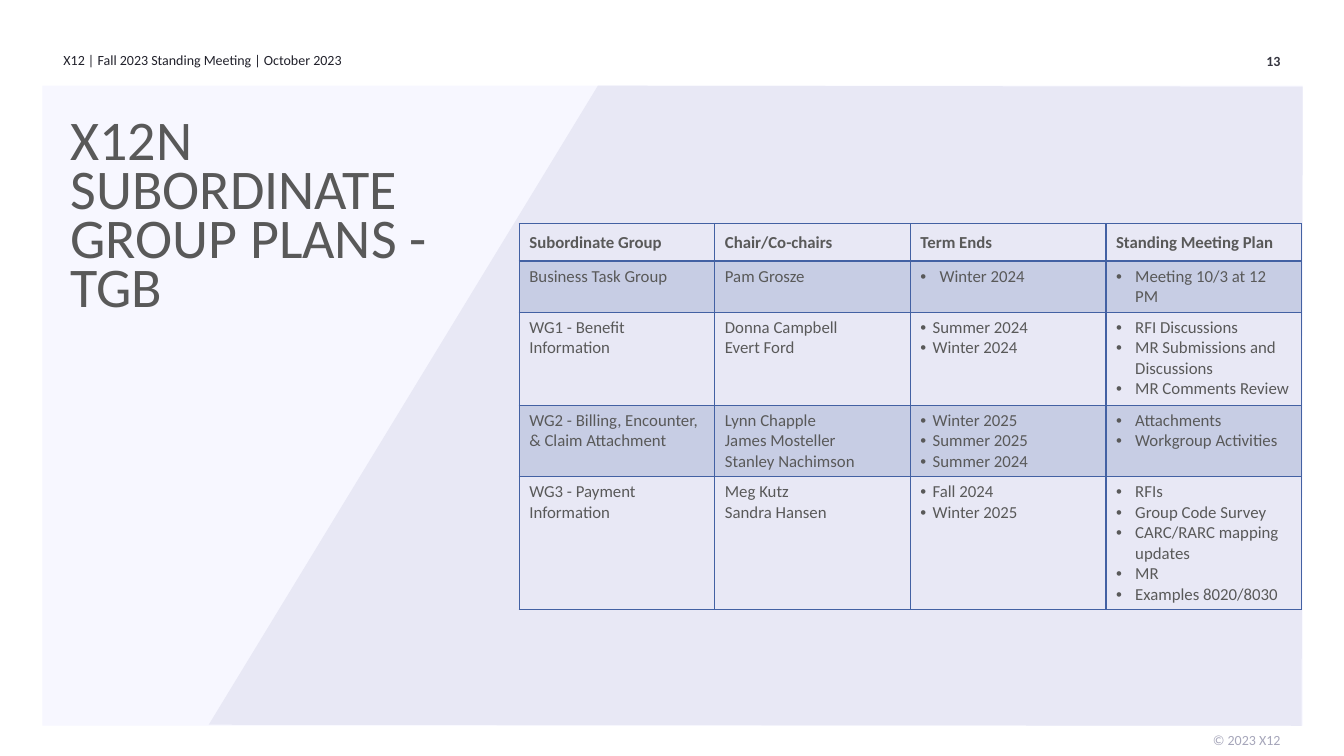
from lxml.etree import SubElement
from pptx import Presentation
from pptx.dml.color import RGBColor
from pptx.enum.shapes import MSO_SHAPE
from pptx.enum.text import MSO_ANCHOR, MSO_AUTO_SIZE, PP_ALIGN
from pptx.oxml.ns import qn
from pptx.util import Inches, Pt

TITLE = "X12N SUBORDINATE GROUP PLANS - TGB"
MEETING = "X12 | Fall 2023 Standing Meeting | October 2023"
PAGE = "13"
COPYRIGHT = "© 2023 X12"
HEADERS = ["Subordinate Group", "Chair/Co-chairs", "Term Ends", "Standing Meeting Plan"]
GROUPS = [
    (["Business Task Group"], ["Pam Grosze"], ["Winter 2024"], ["Meeting 10/3 at 12 PM"]),
    (["WG1 - Benefit Information"], ["Donna Campbell", "Evert Ford"],
     ["Summer 2024", "Winter 2024"],
     ["RFI Discussions", "MR Submissions and Discussions", "MR Comments Review"]),
    (["WG2 - Billing, Encounter, & Claim Attachment"],
     ["Lynn Chapple", "James Mosteller", "Stanley Nachimson"],
     ["Winter 2025", "Summer 2025", "Summer 2024"],
     ["Attachments", "Workgroup Activities"]),
    (["WG3 - Payment Information"], ["Meg Kutz", "Sandra Hansen"],
     ["Fall 2024", "Winter 2025"],
     ["RFIs", "Group Code Survey", "CARC/RARC mapping updates", "MR", "Examples 8020/8030"]),
]
THEME = {
    "font": "Calibri",
    "panel": "F7F7FF", "slant": "E8E8F5", "grid": "4361A3",
    "title": {"size": 40, "color": "595959"},
    "meeting": {"size": 10, "color": "21212B"},
    "page": {"size": 10, "color": "363640", "bold": True},
    "copyright": {"size": 10, "color": "A6A6BA"},
    "head": {"size": 12, "color": "595959", "bold": True},
    "body": {"size": 12, "color": "595959"},
}
SLIDE_W, SLIDE_H = 13.33, 7.5
PANEL = (0.42, 0.85, 12.5, 6.35)
SLANT = [(2.07, 7.19), (5.93, 0.85), (12.92, 0.86), (12.91, 7.2)]
TITLE_BOX = (0.7, 1.22, 3.69, 1.9)
TABLE_LEFT, TABLE_TOP, COL_W = 5.15, 2.22, 1.94
ROW_H = [0.37, 0.51, 0.92, 0.71, 1.32]
LABELS = [
    (MEETING, (0.63, 0.51, 4.5, 0.25), "meeting", PP_ALIGN.LEFT),
    (PAGE, (11.19, 0.52, 1.51, 0.25), "page", PP_ALIGN.RIGHT),
    (COPYRIGHT, (11.19, 7.26, 1.51, 0.25), "copyright", PP_ALIGN.RIGHT),
]


def rgb(value):
    return RGBColor.from_string(value)


def set_all(target, **values):
    for name, value in values.items():
        setattr(target, name, value)


def write(p, text, style):
    look = THEME[style]
    r = p.add_run()
    r.text = text
    set_all(r.font, name=THEME["font"], size=Pt(look["size"]), bold=look.get("bold", False))
    r.font.color.rgb = rgb(look["color"])


def frame(tf, anchor=MSO_ANCHOR.TOP):
    set_all(tf, margin_left=0, margin_right=0, margin_top=0, margin_bottom=0,
            word_wrap=True, auto_size=MSO_AUTO_SIZE.NONE, vertical_anchor=anchor)


def paint(sp, color):
    sp.shadow.inherit = False
    sp.fill.solid()
    sp.fill.fore_color.rgb = rgb(color)
    sp.line.fill.background()


def bullet(p, indent):
    pPr = p._p.get_or_add_pPr()
    pPr.set("marL", str(Inches(indent)))
    pPr.set("indent", str(-Inches(indent)))
    SubElement(pPr, qn("a:buFont"), typeface="Arial")
    SubElement(pPr, qn("a:buChar"), char="•")


def borders(cell, top, bottom):
    tcPr = cell._tc.get_or_add_tcPr()
    for side, width in (("L", 1), ("R", 1), ("T", top), ("B", bottom)):
        ln = SubElement(tcPr, qn("a:ln" + side), w=str(Pt(width)))
        SubElement(SubElement(ln, qn("a:solidFill")), qn("a:srgbClr"), val=THEME["grid"])


def shade(cell, banded):
    if not banded:
        cell.fill.background()
        return
    cell.fill.solid()
    cell.fill.fore_color.rgb = rgb(THEME["grid"])
    color = cell._tc.tcPr.find(qn("a:solidFill")).find(qn("a:srgbClr"))
    SubElement(color, qn("a:alpha"), val="20000")


def add_backdrop(s):
    paint(s.shapes.add_shape(MSO_SHAPE.RECTANGLE, *map(Inches, PANEL)), THEME["panel"])
    corners = [(Inches(x), Inches(y)) for x, y in SLANT]
    outline = s.shapes.build_freeform(*corners[0], scale=1.0)
    outline.add_line_segments(corners[1:], close=True)
    paint(outline.convert_to_shape(), THEME["slant"])


def add_labels(s):
    for text, box, style, align in LABELS:
        tf = s.shapes.add_textbox(*map(Inches, box)).text_frame
        frame(tf)
        tf.paragraphs[0].alignment = align
        write(tf.paragraphs[0], text, style)


def add_title(s):
    sp = s.shapes.title
    left, top, width, height = map(Inches, TITLE_BOX)
    set_all(sp, left=left, top=top, width=width, height=height)
    frame(sp.text_frame)
    p = sp.text_frame.paragraphs[0]
    set_all(p, alignment=PP_ALIGN.LEFT, line_spacing=Pt(35))
    write(p, TITLE, "title")
    s.shapes._spTree.append(sp._element)


def add_plans(s):
    rows = [[[text] for text in HEADERS]] + GROUPS
    table = s.shapes.add_table(
        len(rows), len(HEADERS), Inches(TABLE_LEFT), Inches(TABLE_TOP),
        Inches(COL_W * len(HEADERS)), Inches(sum(ROW_H))).table
    set_all(table, first_row=False, horz_banding=False)
    for column in table.columns:
        column.width = Inches(COL_W)
    for i, row in enumerate(rows):
        table.rows[i].height = Inches(ROW_H[i])
        head = i == 0
        for j, lines in enumerate(row):
            cell = table.cell(i, j)
            set_all(cell, margin_left=Inches(0.1), margin_right=Inches(0.1),
                    margin_top=Inches(0.05), margin_bottom=Inches(0.05),
                    vertical_anchor=MSO_ANCHOR.MIDDLE if head else MSO_ANCHOR.TOP)
            borders(cell, top=2 if i == 1 else 1, bottom=2 if head else 1)
            shade(cell, banded=i % 2 == 1)
            tf = cell.text_frame
            for n, text in enumerate(lines):
                p = tf.add_paragraph() if n else tf.paragraphs[0]
                if not head and j >= 2:
                    bullet(p, 0.12 if j == 2 and i > 1 else 0.19)
                write(p, text, "head" if head else "body")


def main():
    prs = Presentation()
    set_all(prs, slide_width=Inches(SLIDE_W), slide_height=Inches(SLIDE_H))
    s = prs.slides.add_slide(prs.slide_layouts[5])
    add_backdrop(s)
    add_labels(s)
    add_title(s)
    add_plans(s)
    prs.save("out.pptx")


if __name__ == "__main__":
    main()
